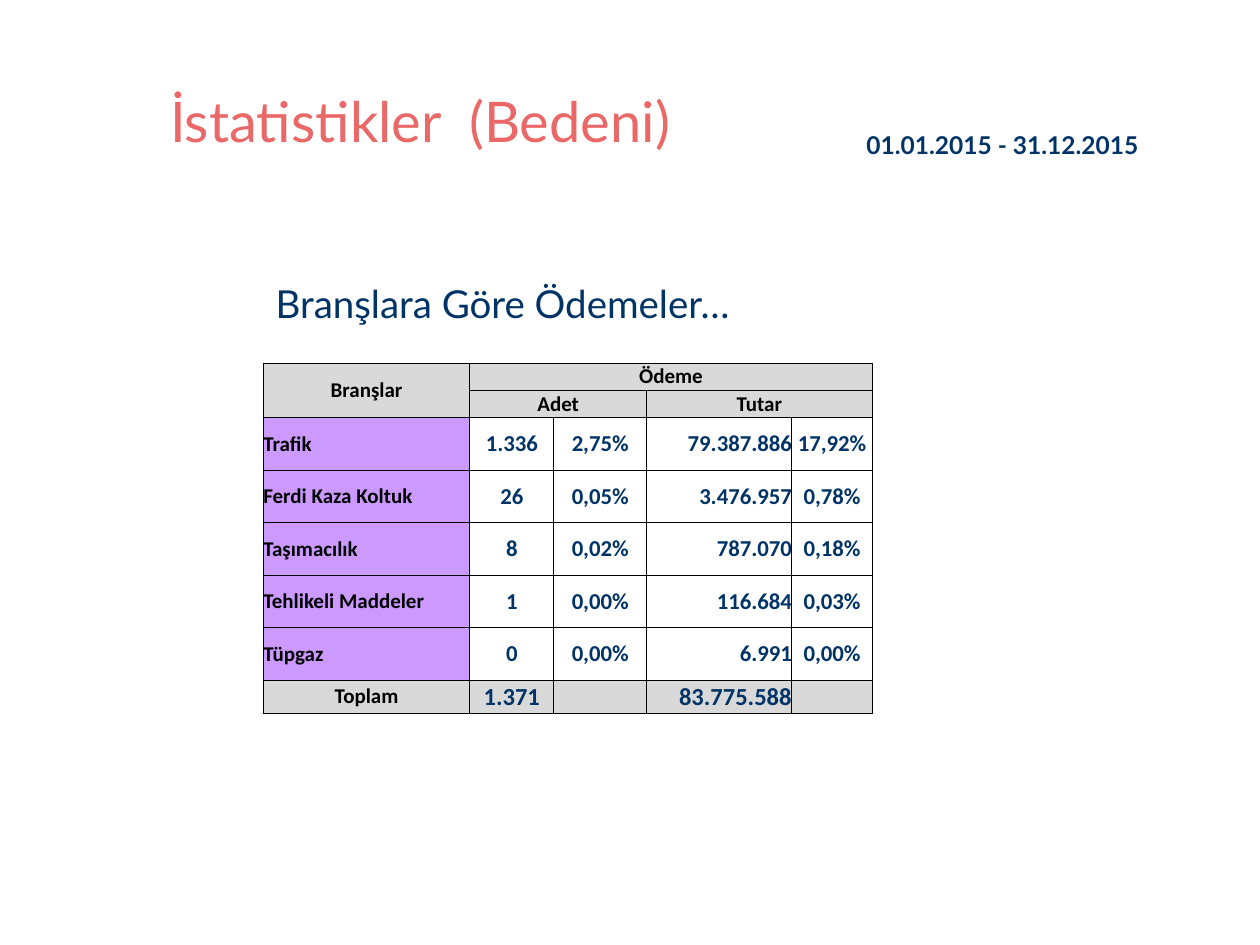
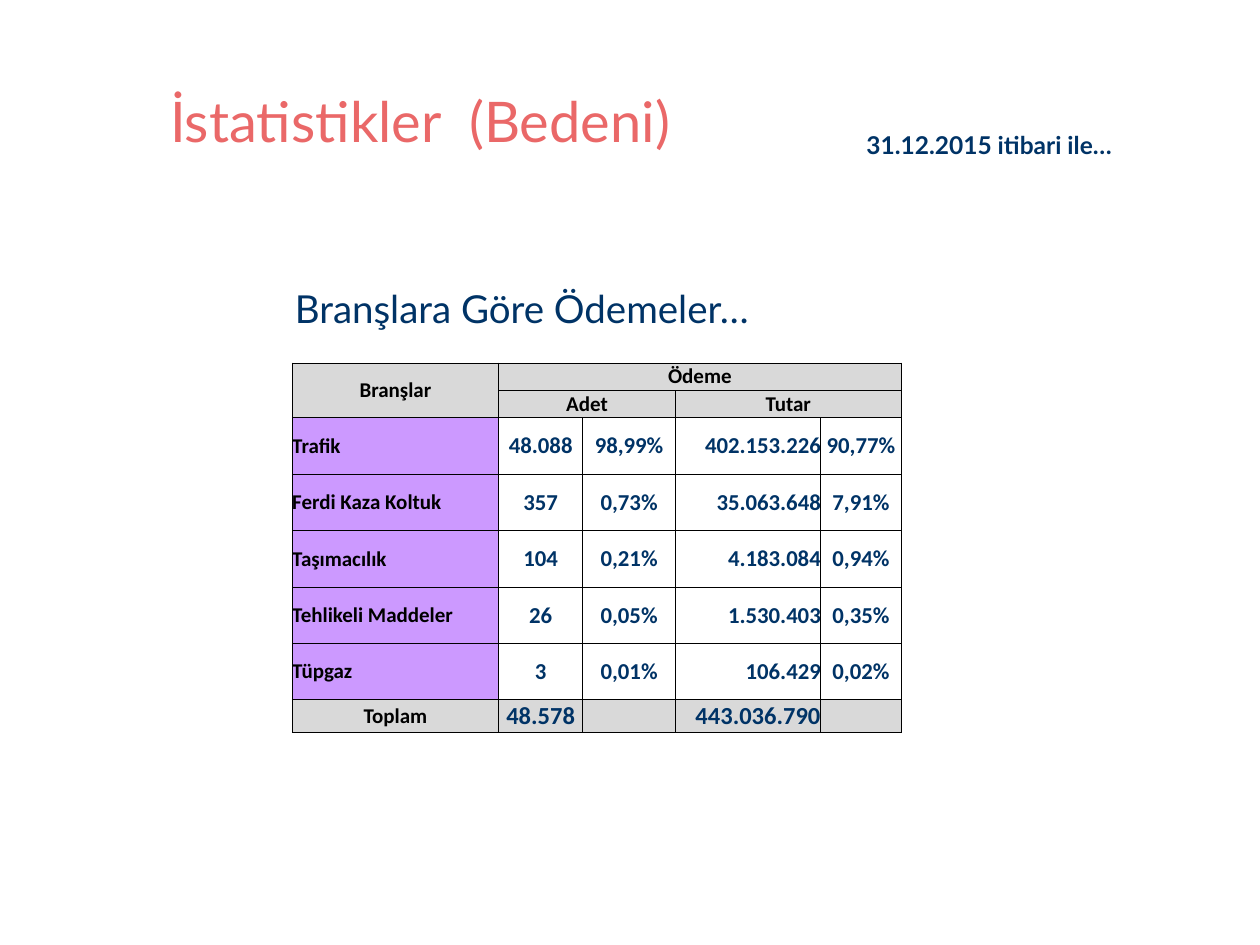
"""Builds two slides of bodily injury payment statistics by insurance branch."""
from dataclasses import dataclass

import pptx
import pptx.dml.color
import pptx.enum.text
import pptx.oxml
import pptx.oxml.ns
import pptx.util

Pt = pptx.util.Pt
Align = pptx.enum.text.PP_ALIGN
Anchor = pptx.enum.text.MSO_ANCHOR

COLORS = {
    "title": "EA6868",
    "navy": "003366",
    "black": "000000",
    "header": "D9D9D9",
    "branch": "CC99FF",
}
TITLE = "İstatistikler  (Bedeni)"
HEADING = "Branşlara Göre Ödemeler…"
BRANCHES = ["Trafik", "Ferdi Kaza Koltuk", "Taşımacılık", "Tehlikeli Maddeler", "Tüpgaz"]
HEADER_ROWS = [["Branşlar", "Ödeme", "", "", ""], ["", "Adet", "", "Tutar", ""]]
HEADER_MERGES = [((0, 0), (1, 0)), ((0, 1), (0, 4)), ((1, 1), (1, 2)), ((1, 3), (1, 4))]
COLUMN_WIDTHS = [118, 48, 53, 83, 46]
COLUMN_ALIGNS = [Align.LEFT, Align.CENTER, Align.CENTER, Align.RIGHT, Align.CENTER]
HEADER_HEIGHT = 15.7
TOTAL_HEIGHT = 18.7
TABLE_TOP = 207.4


@dataclass
class Frame:
    left: float
    top: float
    width: float
    height: float


@dataclass
class TextStyle:
    size: float
    color: str
    font: str = "Lato"
    bold: bool = False
    align: Align = Align.LEFT
    line_spacing: float = 1.0


@dataclass
class PaymentPage:
    period: str
    period_width: float
    heading: Frame
    table_left: float
    branch_height: float
    payments: list[list[str]]
    totals: list[str]


TITLE_FRAME = Frame(90, 46, 594, 45.5)
TITLE_STYLE = TextStyle(32, "title")
HEADING_STYLE = TextStyle(22, "navy", line_spacing=1.4)
PERIOD_STYLE = TextStyle(14, "navy", bold=True, line_spacing=1.4)

PAGES = [
    PaymentPage(
        "01.01.2015 - 31.12.2015", 190, Frame(150.5, 145.5, 345.5, 44.5), 150.5, 30,
        [
            ["1.336", "2,75%", "79.387.886", "17,92%"],
            ["26", "0,05%", "3.476.957", "0,78%"],
            ["8", "0,02%", "787.070", "0,18%"],
            ["1", "0,00%", "116.684", "0,03%"],
            ["0", "0,00%", "6.991", "0,00%"],
        ],
        ["1.371", "", "83.775.588", ""],
    ),
    PaymentPage(
        "31.12.2015 itibari ile…", 177, Frame(161.5, 148.5, 351.5, 44.5), 167, 32.25,
        [
            ["48.088", "98,99%", "402.153.226", "90,77%"],
            ["357", "0,73%", "35.063.648", "7,91%"],
            ["104", "0,21%", "4.183.084", "0,94%"],
            ["26", "0,05%", "1.530.403", "0,35%"],
            ["3", "0,01%", "106.429", "0,02%"],
        ],
        ["48.578", "", "443.036.790", ""],
    ),
]


def rgb(name: str) -> pptx.dml.color.RGBColor:
    return pptx.dml.color.RGBColor.from_string(COLORS[name])


def write(text_frame, text: str, style: TextStyle) -> None:
    para = text_frame.paragraphs[0]
    if text:
        para.add_run().text = text
    else:
        para._p.get_or_add_endParaRPr().set("sz", str(int(style.size * 100)))
    para.alignment = style.align
    para.line_spacing = style.line_spacing
    para.space_before = Pt(0)
    para.font.name = style.font
    para.font.size = Pt(style.size)
    para.font.bold = style.bold
    para.font.color.rgb = rgb(style.color)


def place_text(box, frame: Frame, text: str, style: TextStyle,
               anchor: Anchor = Anchor.TOP, wrap: bool = True) -> None:
    box.left, box.top = Pt(frame.left), Pt(frame.top)
    box.width, box.height = Pt(frame.width), Pt(frame.height)
    text_frame = box.text_frame
    text_frame.word_wrap = wrap
    text_frame.auto_size = pptx.enum.text.MSO_AUTO_SIZE.SHAPE_TO_FIT_TEXT
    text_frame.vertical_anchor = anchor
    write(text_frame, text, style)


def add_borders(cell) -> None:
    properties = cell._tc.get_or_add_tcPr()
    for side in ("lnL", "lnR", "lnT", "lnB"):
        properties.append(pptx.oxml.parse_xml(
            f'<a:{side} {pptx.oxml.ns.nsdecls("a")} w="{Pt(0.5)}"><a:solidFill>'
            f'<a:srgbClr val="{COLORS["black"]}"/></a:solidFill></a:{side}>'))


def format_cell(cell, text: str, style: TextStyle, fill: str | None) -> None:
    cell.margin_left = cell.margin_right = cell.margin_top = cell.margin_bottom = 0
    cell.vertical_anchor = Anchor.MIDDLE
    add_borders(cell)
    if fill:
        cell.fill.solid()
        cell.fill.fore_color.rgb = rgb(fill)
    else:
        cell.fill.background()
    write(cell.text_frame, text, style)


def add_payment_table(page, content: PaymentPage) -> None:
    branch_rows = [[name, *values] for name, values in zip(BRANCHES, content.payments)]
    rows = [*HEADER_ROWS, *branch_rows, ["Toplam", *content.totals]]
    heights = [HEADER_HEIGHT] * 2 + [content.branch_height] * len(BRANCHES) + [TOTAL_HEIGHT]
    table = page.shapes.add_table(
        len(rows), len(COLUMN_WIDTHS), Pt(content.table_left), Pt(TABLE_TOP),
        Pt(sum(COLUMN_WIDTHS)), Pt(sum(heights))).table
    table.first_row = table.horz_banding = False
    for column, width in zip(table.columns, COLUMN_WIDTHS):
        column.width = Pt(width)
    for row, height in zip(table.rows, heights):
        row.height = Pt(height)
    for start, end in HEADER_MERGES:
        table.cell(*start).merge(table.cell(*end))
    last = len(rows) - 1
    for row_index, texts in enumerate(rows):
        is_header = row_index < len(HEADER_ROWS)
        is_total = row_index == last
        for column_index, text in enumerate(texts):
            is_label = is_header or column_index == 0
            centred = is_header or (is_total and column_index == 0)
            style = TextStyle(
                12 if is_label else 14 if is_total else 13,
                "black" if is_label else "navy", "Calibri", True,
                Align.CENTER if centred else COLUMN_ALIGNS[column_index])
            fill = "header" if is_header or is_total else "branch" if is_label else None
            format_cell(table.cell(row_index, column_index), text, style, fill)


def add_text_box(page, frame: Frame, text: str, style: TextStyle, **options) -> None:
    place_text(page.shapes.add_textbox(0, 0, 0, 0), frame, text, style, **options)


def build_page(deck, content: PaymentPage) -> None:
    page = deck.slides.add_slide(deck.slide_layouts.get_by_name("Title Only"))
    place_text(page.shapes.title, TITLE_FRAME, TITLE, TITLE_STYLE)
    add_text_box(page, content.heading, HEADING, HEADING_STYLE, anchor=Anchor.MIDDLE)
    add_payment_table(page, content)
    add_text_box(page, Frame(488, 64, content.period_width, 28), content.period,
                 PERIOD_STYLE, wrap=False)


def main() -> None:
    deck = pptx.Presentation()
    deck.slide_width, deck.slide_height = Pt(720), Pt(540)
    for content in PAGES:
        build_page(deck, content)
    deck.save("out.pptx")


if __name__ == "__main__":
    main()
